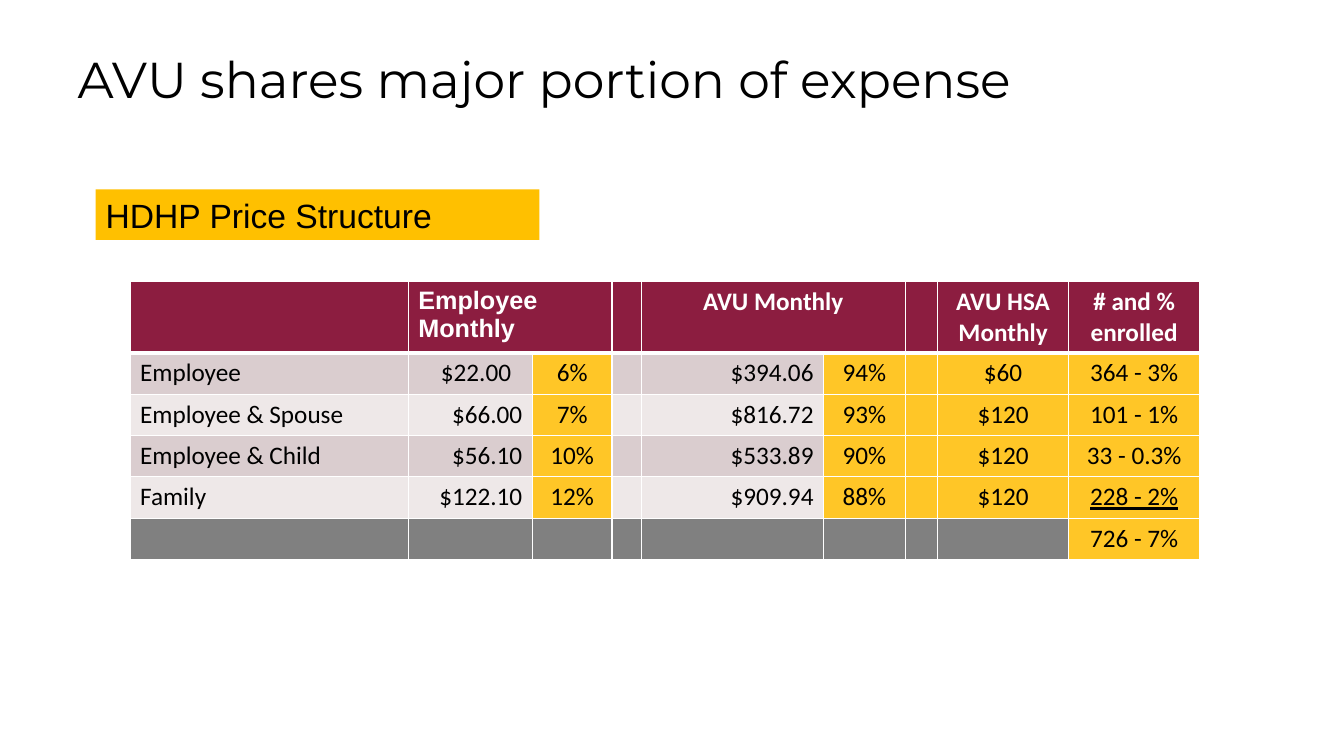
import dataclasses
import typing

import lxml.etree
import pptx
import pptx.dml.color
import pptx.enum.shapes
import pptx.enum.text
import pptx.oxml.ns
import pptx.util

EMU_PER_PX = 9144  # 100 px to the inch
COLORS = {
    "black": "000000",
    "white": "FFFFFF",
    "label": "FFC000",
    "maroon": "8C1D40",
    "gold": "FFC627",
    "dark band": "DACDCF",
    "light band": "EEE8E8",
    "gray": "808080",
}
ALIGN = pptx.enum.text.PP_ALIGN
COLUMN_WIDTHS = [276, 123, 79, 29, 181, 81, 32, 130, 130]
HEADER_HEIGHT, ROW_HEIGHT = 70, 41
COLUMN_ALIGNS = [ALIGN.LEFT, ALIGN.RIGHT, ALIGN.CENTER, ALIGN.LEFT, ALIGN.RIGHT] + [ALIGN.CENTER] * 4
GOLD_COLUMNS = {2, 5, 6, 7, 8}
LAST_COLUMN = len(COLUMN_WIDTHS) - 1


@dataclasses.dataclass
class Header:
    column: int
    text: str
    span: int = 1
    font: str = "Calibri"
    align: typing.Any = ALIGN.CENTER


@dataclasses.dataclass
class Plan:
    name: str
    employee_cost: str
    employee_share: str
    employer_cost: str
    employer_share: str
    savings: str
    enrolled: str

    def cells(self) -> list[str]:
        return [self.name, self.employee_cost, self.employee_share, "",
                self.employer_cost, self.employer_share, "", self.savings, self.enrolled]


HEADERS = [
    Header(1, "Employee Monthly", 2, "Arial", ALIGN.LEFT),
    Header(4, "AVU Monthly", 2),
    Header(7, "AVU HSA Monthly"),
    Header(8, "# and % enrolled"),
]
PLANS = [
    Plan("Employee", "$22.00", "6%", "$394.06", "94%", "$60", "364 - 3%"),
    Plan("Employee & Spouse", "$66.00", "7%", "$816.72", "93%", "$120", "101 - 1%"),
    Plan("Employee & Child", "$56.10", "10%", "$533.89", "90%", "$120", "33 - 0.3%"),
    Plan("Family", "$122.10", "12%", "$909.94", "88%", "$120", "228 - 2%"),
]
TOTAL_ENROLLED = "726 - 7%"


def px(length: int) -> pptx.util.Emu:
    return pptx.util.Emu(length * EMU_PER_PX)


def rgb(color: str) -> pptx.dml.color.RGBColor:
    return pptx.dml.color.RGBColor.from_string(COLORS[color])


def write(frame: typing.Any, text: str, font: str, size: int, color: str = "black",
          align: typing.Any = ALIGN.LEFT, bold: bool = False) -> None:
    frame.text = text
    para = frame.paragraphs[0]
    para.alignment = align
    para.font.name = font
    para.font.size = pptx.util.Pt(size)
    para.font.bold = bold
    para.font.color.rgb = rgb(color)


def fill_solid(target: typing.Any, color: str) -> None:
    target.fill.solid()
    target.fill.fore_color.rgb = rgb(color)


def add_borders(cell: typing.Any, top: int, bottom: int) -> None:
    """Draw white cell borders, with top and bottom widths in points."""
    properties = cell._tc.get_or_add_tcPr()
    qn = pptx.oxml.ns.qn
    for index, (side, points) in enumerate({"L": 1, "R": 1, "T": top, "B": bottom}.items()):
        line = lxml.etree.Element(qn(f"a:ln{side}"), w=str(pptx.util.Pt(points)))
        solid = lxml.etree.SubElement(line, qn("a:solidFill"))
        lxml.etree.SubElement(solid, qn("a:srgbClr"), val=COLORS["white"])
        properties.insert(index, line)


def cell_color(row: int, column: int, total_row: int) -> str:
    if row == 0:
        return "maroon"
    if row == total_row:
        return "gold" if column == LAST_COLUMN else "gray"
    if column in GOLD_COLUMNS:
        return "gold"
    return "dark band" if row % 2 else "light band"


def add_title(page: typing.Any) -> None:
    title = page.shapes.title
    title.left, title.top, title.width, title.height = px(67), px(30), px(1200), px(96)
    write(title.text_frame, "AVU shares major portion of expense", "Montserrat", 36)
    title.text_frame.auto_size = pptx.enum.text.MSO_AUTO_SIZE.NONE
    title.text_frame.vertical_anchor = pptx.enum.text.MSO_ANCHOR.MIDDLE


def add_label(page: typing.Any) -> None:
    label = page.shapes.add_shape(pptx.enum.shapes.MSO_SHAPE.RECTANGLE,
                                  px(95), px(188), px(440), px(50))
    label.shadow.inherit = False
    fill_solid(label, "label")
    label.line.fill.background()
    write(label.text_frame, "HDHP Price Structure", "Arial", 24)
    label.text_frame.word_wrap = True
    label.text_frame.vertical_anchor = pptx.enum.text.MSO_ANCHOR.TOP


def add_price_table(page: typing.Any) -> None:
    total_row = len(PLANS) + 1
    heights = [HEADER_HEIGHT] + [ROW_HEIGHT] * total_row
    table = page.shapes.add_table(len(heights), len(COLUMN_WIDTHS), px(129), px(279),
                                  px(sum(COLUMN_WIDTHS)), px(sum(heights))).table
    table.horz_banding = False
    for column, width in zip(table.columns, COLUMN_WIDTHS):
        column.width = px(width)
    for row, height in enumerate(heights):
        table.rows[row].height = px(height)
        for column in range(len(COLUMN_WIDTHS)):
            cell = table.cell(row, column)
            fill_solid(cell, cell_color(row, column, total_row))
            add_borders(cell, 3 if row == 1 else 1, 3 if row == 0 else 1)

    for header in HEADERS:
        cell = table.cell(0, header.column)
        if header.span > 1:
            cell.merge(table.cell(0, header.column + header.span - 1))
        write(cell.text_frame, header.text, header.font, 18, "white", header.align, True)

    total = [""] * LAST_COLUMN + [TOTAL_ENROLLED]
    for row, texts in enumerate([plan.cells() for plan in PLANS] + [total], start=1):
        for column, text in enumerate(texts):
            if text:
                write(table.cell(row, column).text_frame, text, "Calibri", 18,
                      align=COLUMN_ALIGNS[column])
    table.cell(1, 1).margin_right = px(21)
    last_plan = table.cell(len(PLANS), LAST_COLUMN)
    last_plan.text_frame.paragraphs[0].font.underline = True


def main() -> None:
    deck = pptx.Presentation()
    deck.slide_width, deck.slide_height = px(1333), px(750)
    page = deck.slides.add_slide(deck.slide_layouts.get_by_name("Title Only"))
    add_title(page)
    add_label(page)
    add_price_table(page)
    deck.save("out.pptx")


if __name__ == "__main__":
    main()
